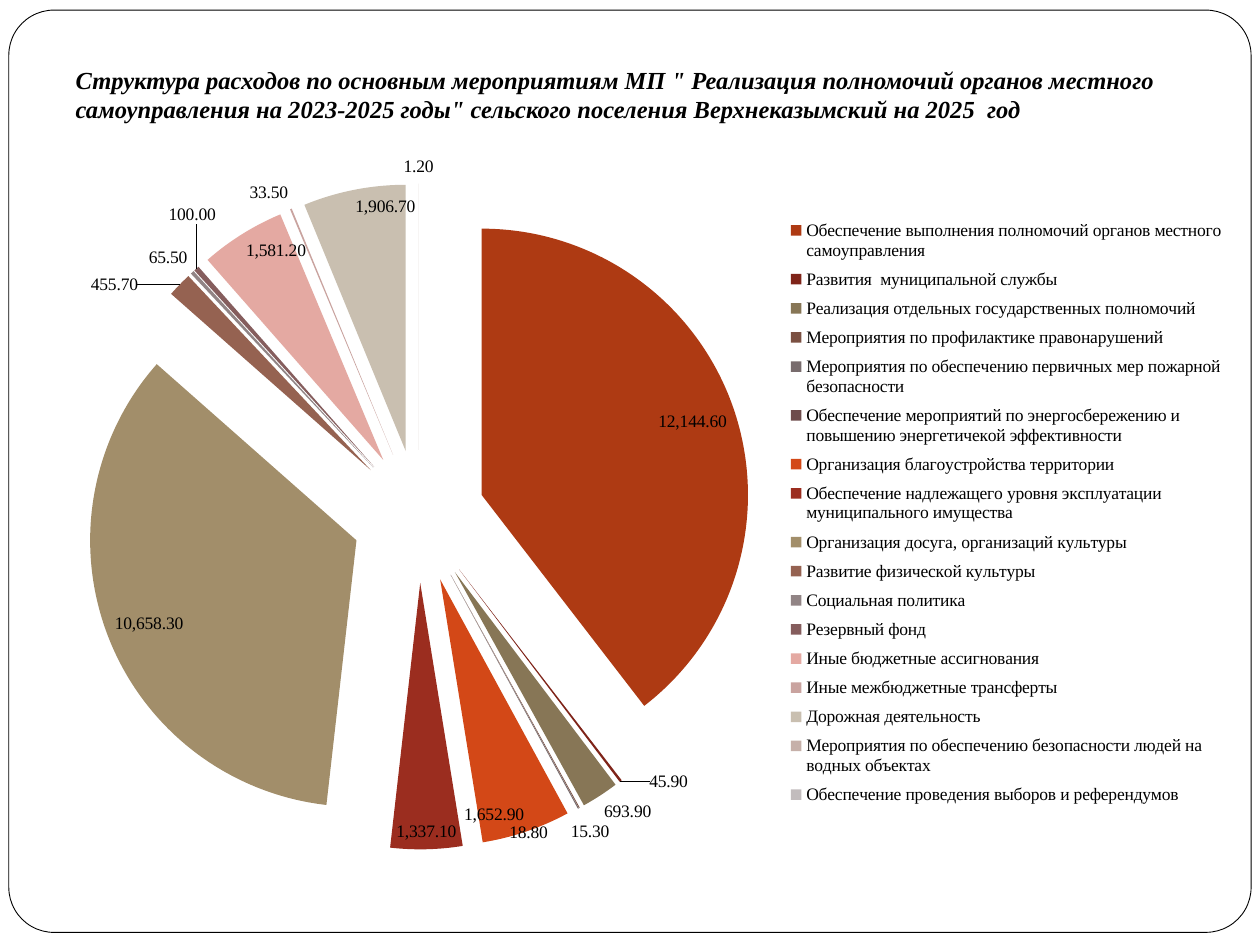
from lxml.etree import SubElement
from pptx import Presentation
from pptx.chart.data import CategoryChartData
from pptx.dml.color import RGBColor
from pptx.enum.chart import XL_CHART_TYPE as ChartType
from pptx.enum.chart import XL_LABEL_POSITION as LabelPosition
from pptx.enum.chart import XL_LEGEND_POSITION as LegendPosition
from pptx.enum.shapes import MSO_SHAPE as Shape
from pptx.enum.text import MSO_ANCHOR as Anchor
from pptx.enum.text import PP_ALIGN as Align
from pptx.oxml.ns import qn
from pptx.util import Inches, Pt

FONT = "Times New Roman"
BLACK = RGBColor(0, 0, 0)
WHITE = RGBColor(255, 255, 255)
TITLE = ('Структура расходов по основным мероприятиям МП " Реализация полномочий '
         'органов местного самоуправления на 2023-2025 годы" сельского поселения '
         'Верхнеказымский на 2025  год')

# Category, value, slice colour
EXPENSES = [
    ("Обеспечение выполнения полномочий органов местного самоуправления ", 12144.6, RGBColor(0xAE, 0x3A, 0x13)),
    ("Развития  муниципальной службы ", 45.9, RGBColor(0x7F, 0x24, 0x19)),
    ("Реализация отдельных государственных полномочий ", 693.9, RGBColor(0x87, 0x76, 0x56)),
    ("Мероприятия по профилактике правонарушений", 15.3, RGBColor(0x7B, 0x50, 0x42)),
    ("Мероприятия по обеспечению первичных мер пожарной безопасности ", 18.8, RGBColor(0x78, 0x6C, 0x6D)),
    ("Обеспечение мероприятий по энергосбережению и повышению энергетичекой эффективности", 0, RGBColor(0x6E, 0x4C, 0x4C)),
    ("Организация благоустройства территории", 1652.9, RGBColor(0xD3, 0x48, 0x17)),
    ("Обеспечение надлежащего уровня эксплуатации муниципального имущества ", 1337.1, RGBColor(0x9B, 0x2D, 0x1F)),
    ("Организация досуга, организаций культуры", 10658.3, RGBColor(0xA2, 0x8E, 0x6A)),
    ("Развитие физической культуры", 455.7, RGBColor(0x95, 0x62, 0x51)),
    ("Социальная политика ", 65.5, RGBColor(0x91, 0x84, 0x85)),
    ("Резервный фонд", 100, RGBColor(0x85, 0x5D, 0x5D)),
    ("Иные бюджетные ассигнования ", 1581.2, RGBColor(0xE4, 0xA9, 0xA2)),
    ("Иные межбюджетные трансферты ", 33.5, RGBColor(0xC9, 0xA3, 0x9F)),
    ("Дорожная деятельность", 1906.7, RGBColor(0xC9, 0xBF, 0xB0)),
    ("Мероприятия по обеспечению безопасности людей на водных объектах", 1.2, RGBColor(0xC6, 0xB0, 0xA9)),
    ("Обеспечение проведения выборов и референдумов", 0, RGBColor(0xC2, 0xBC, 0xBD)),
]
INSIDE_FROM = 1000  # values from here on carry their label inside the slice
# Label shifts by slice index, as shares of the chart's size
LABEL_SHIFTS = {1: (0.02, -0.02), 3: (-0.01, 0.01), 4: (-0.06, 0.01),
                9: (-0.03, 0.02), 11: (0.02, -0.05)}


def add_frame(page):
    frame = page.shapes.add_shape(Shape.ROUNDED_RECTANGLE, Inches(0.07), Inches(0.08),
                                  Inches(9.86), Inches(7.32))
    frame.adjustments[0] = 0.049
    frame.shadow.inherit = False
    frame.fill.solid()
    frame.fill.fore_color.rgb = WHITE
    frame.line.color.rgb = BLACK
    frame.line.width = Pt(0.5)
    page.shapes._spTree.insert(2, frame._element)  # behind the title


def set_title(page):
    title = page.shapes.title
    title.left, title.top, title.width, title.height = map(Inches, (0.5, 0.29, 8.91, 0.79))
    text_frame = title.text_frame
    text_frame.text = TITLE
    text_frame.word_wrap = True
    text_frame.vertical_anchor = Anchor.BOTTOM
    text_frame.margin_bottom = Inches(0.1)
    para = text_frame.paragraphs[0]
    para.alignment = Align.LEFT
    font = para.runs[0].font
    font.name, font.size, font.bold, font.italic = FONT, Pt(14), True, True
    font.color.rgb = BLACK


def add_layout(parent, index, **values):
    """Insert a manual layout into a chart part."""
    for old in parent.findall(qn("c:layout")):
        parent.remove(old)
    layout = SubElement(parent, qn("c:layout"))
    parent.insert(index, layout)
    manual = SubElement(layout, qn("c:manualLayout"))
    for tag, value in values.items():
        SubElement(manual, qn(f"c:{tag}")).set("val", str(value))


def format_labels(series):
    labels = series.data_labels
    labels.show_value = True
    labels.number_format = "#,##0.00"
    labels.number_format_is_linked = False
    for index, (_, value, _) in enumerate(EXPENSES):
        label = series.points[index].data_label
        label.position = (LabelPosition.INSIDE_END if value >= INSIDE_FROM
                          else LabelPosition.OUTSIDE_END)
        element = labels._element.xpath(f"c:dLbl[c:idx/@val='{index}']")[0]
        if not value:  # empty slices have no label
            for child in list(element)[1:]:
                element.remove(child)
            SubElement(element, qn("c:delete")).set("val", "1")
        elif index in LABEL_SHIFTS:
            shift_x, shift_y = LABEL_SHIFTS[index]
            add_layout(element, 1, x=shift_x, y=shift_y)


def add_pie(page):
    data = CategoryChartData(number_format="#,##0.00")
    data.categories = [name for name, _, _ in EXPENSES]
    data.add_series("Series 1", [value for _, value, _ in EXPENSES])
    chart = page.shapes.add_chart(ChartType.PIE_EXPLODED, Inches(0.2), Inches(1.07),
                                  Inches(9.61), Inches(6.06), data).chart
    chart.has_title = False
    chart.font.name, chart.font.size = FONT, Pt(10)
    chart.font.color.rgb = BLACK

    # Slices
    series = chart.plots[0].series[0]
    for explosion in series._element.xpath("c:explosion"):
        explosion.set("val", "25")
    for index, (_, _, colour) in enumerate(EXPENSES):
        fill = series.points[index].format.fill
        fill.solid()
        fill.fore_color.rgb = colour
    format_labels(series)

    # Legend and plot area
    chart.has_legend = True
    chart.legend.position = LegendPosition.RIGHT
    chart.legend.include_in_layout = False
    add_layout(chart.legend._element, 1, xMode="edge", yMode="edge",
               x=0.63, y=0.1, w=0.36, h=0.79)
    plot_area = chart._chartSpace.xpath("c:chart/c:plotArea")[0]
    add_layout(plot_area, 0, layoutTarget="inner", xMode="edge", yMode="edge",
               x=0.05, y=0.06, w=0.55, h=0.88)


def main():
    deck = Presentation()
    deck.slide_width, deck.slide_height = Inches(10), Inches(7.5)
    page = deck.slides.add_slide(deck.slide_layouts[5])
    add_frame(page)
    set_title(page)
    add_pie(page)
    deck.save("out.pptx")


if __name__ == "__main__":
    main()
